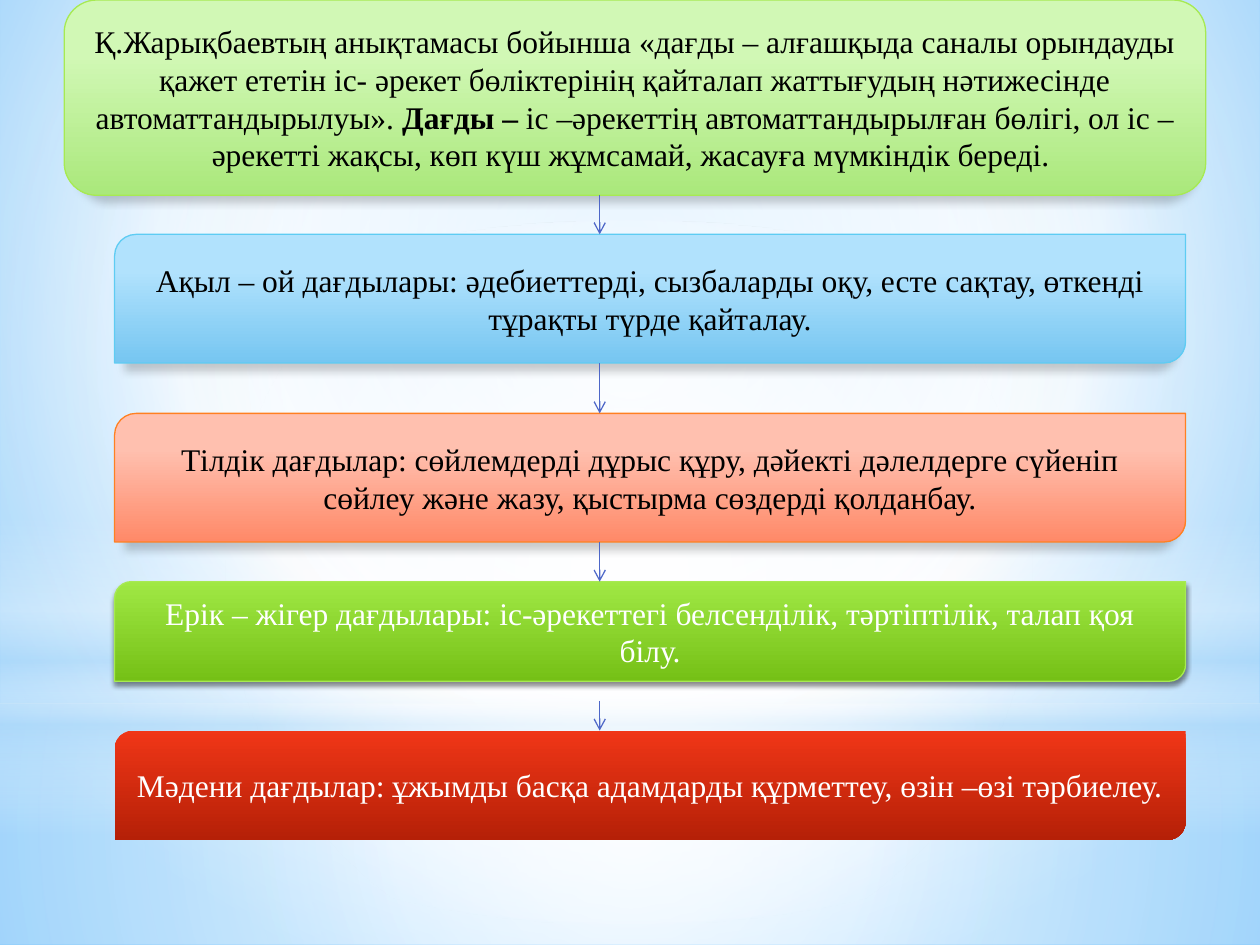
from lxml.etree import SubElement
from pptx import Presentation
from pptx.dml.color import RGBColor
from pptx.enum.shapes import MSO_CONNECTOR, MSO_SHAPE
from pptx.enum.text import MSO_ANCHOR, PP_ALIGN
from pptx.oxml.ns import qn
from pptx.util import Pt

WHITE = RGBColor(0xFF, 0xFF, 0xFF)
BLACK = RGBColor(0x00, 0x00, 0x00)
SKY = RGBColor(0xB4, 0xDC, 0xFA)
BACK_EDGE = RGBColor(0x9E, 0xD5, 0xFF)
BACK_END = RGBColor(0x5B, 0xB9, 0xFF)
ARROW = RGBColor(0x4E, 0x67, 0xC8)
GREEN_LINE = RGBColor(0xA7, 0xEA, 0x52)
BLUE_LINE = RGBColor(0x5E, 0xCC, 0xF3)
ORANGE_LINE = RGBColor(0xFF, 0x80, 0x21)
PALE_GREEN = ((28, RGBColor(0xD1, 0xF8, 0xB5)), (100, RGBColor(0xAA, 0xE8, 0x7B)))
PALE_BLUE = ((28, RGBColor(0xB1, 0xE2, 0xFD)), (100, RGBColor(0x76, 0xC6, 0xF1)))
PALE_RED = ((28, RGBColor(0xFF, 0xC0, 0xAF)), (100, RGBColor(0xFF, 0x89, 0x68)))
GREEN = ((0, RGBColor(0xA0, 0xE8, 0x44)), (100, RGBColor(0x75, 0xC0, 0x16)))
RED = ((0, RGBColor(0xF0, 0x36, 0x17)), (100, RGBColor(0xB5, 0x20, 0x07)))

# Opacity %, blur, distance, scale %
SOFT_SHADOW = (20, 5, 4, 98)
CLOSE_SHADOW = (45, 3.1, 1.8, 100)

CENTRE = (50, 50, 50, 50)
BAR_LEFT, BAR_WIDTH = 65.5, 612
ARROW_X = 342.7


def add_color(parent, color, opacity):
    element = SubElement(parent, qn("a:srgbClr"), val=str(color))
    if opacity < 100:
        SubElement(element, qn("a:alpha"), val=str(opacity * 1000))


def write_gradient(gradient, stops, focus=None):
    """Fill with (position %, colour[, opacity %]) stops: downwards, or circular around focus."""
    for child in list(gradient):
        gradient.remove(child)
    stop_list = SubElement(gradient, qn("a:gsLst"))
    for position, color, *opacity in stops:
        stop = SubElement(stop_list, qn("a:gs"), pos=str(position * 1000))
        add_color(stop, color, opacity[0] if opacity else 100)
    if focus:
        circle = SubElement(gradient, qn("a:path"), path="circle")
        sides = {side: str(value * 1000) for side, value in zip("ltrb", focus)}
        SubElement(circle, qn("a:fillToRect"), **sides)
    else:
        SubElement(gradient, qn("a:lin"), ang="5400000", scaled="0")


class SlideBuilder:
    font_name = "Times New Roman"
    font_size = Pt(18)
    line_width = Pt(0.75)

    def __init__(self, slide):
        self.slide = slide

    def background(self, stops, focus):
        self.slide.background.fill.gradient()
        write_gradient(next(self.slide.element.iter(qn("a:gradFill"))), stops, focus)

    def panel(self, kind, left, top, width, height, stops, focus=None):
        shape = self.slide.shapes.add_shape(kind, Pt(left), Pt(top), Pt(width), Pt(height))
        shape.shadow.inherit = False
        shape.line.fill.background()
        shape.fill.gradient()
        write_gradient(shape.element.spPr.find(qn("a:gradFill")), stops, focus)
        return shape

    def text_box(self, kind, left, top, width, height, stops, runs, color, line=None, shadow=None):
        """Add a gradient shape with centred text; runs are (text, bold) pairs."""
        shape = self.panel(kind, left, top, width, height, stops)
        if line is not None:
            shape.line.color.rgb = line
            shape.line.width = self.line_width
        if shadow:
            self.cast_shadow(shape, *shadow)
        frame = shape.text_frame
        frame.word_wrap = True
        frame.vertical_anchor = MSO_ANCHOR.MIDDLE
        paragraph = frame.paragraphs[0]
        paragraph.alignment = PP_ALIGN.CENTER
        for text, bold in runs:
            run = paragraph.add_run()
            run.text = text
            run.font.name = self.font_name
            run.font.size = self.font_size
            run.font.bold = bold
            run.font.color.rgb = color

    def cast_shadow(self, shape, opacity, blur, distance, scale):
        effects = shape.element.spPr.find(qn("a:effectLst"))
        shadow = SubElement(
            effects, qn("a:outerShdw"), blurRad=str(Pt(blur)), dist=str(Pt(distance)),
            dir="5400000", sx=str(scale * 1000), sy=str(scale * 1000),
            algn="ctr", rotWithShape="0")
        add_color(shadow, BLACK, opacity)

    def down_arrow(self, x, start, end):
        connector = self.slide.shapes.add_connector(
            MSO_CONNECTOR.STRAIGHT, Pt(x), Pt(start), Pt(x), Pt(end))
        connector.line.color.rgb = ARROW
        connector.line.width = self.line_width
        SubElement(connector.line._get_or_add_ln(), qn("a:tailEnd"), type="arrow")
        SubElement(connector.element.spPr, qn("a:effectLst"))


def main():
    presentation = Presentation()
    presentation.slide_width, presentation.slide_height = Pt(720), Pt(540)
    builder = SlideBuilder(presentation.slides.add_slide(presentation.slide_layouts[6]))

    builder.background(((0, BACK_EDGE), (60, WHITE), (100, BACK_END)), (20, 10, 20, 60))
    rectangle = MSO_SHAPE.RECTANGLE
    builder.panel(rectangle, 0, 401.8, 720, 138.2,
                  ((0, WHITE, 91), (37, WHITE, 76), (100, SKY, 79)), CENTRE)
    builder.panel(rectangle, 0, 0, 720, 401.8,
                  ((0, WHITE, 89), (48, WHITE, 62), (100, SKY, 79)), CENTRE)
    builder.panel(rectangle, 0, 296.6, 720, 180,
                  ((0, WHITE, 0), (29, WHITE, 30), (45, SKY, 40),
                   (55, WHITE, 26), (65, SKY, 60), (100, WHITE, 0)))
    builder.panel(MSO_SHAPE.OVAL, 0, 126, 720, 401.8,
                  ((0, WHITE), (56, WHITE, 0)), CENTRE)

    definition = (
        ("Қ.Жарықбаевтың анықтамасы бойынша «дағды – алғашқыда саналы орындауды қажет ететін "
         "іс- әрекет бөліктерінің қайталап жаттығудың нәтижесінде автоматтандырылуы». ", False),
        ("Дағды – ", True),
        ("іс –әрекеттің автоматтандырылған бөлігі, ол іс –әрекетті жақсы, көп күш жұмсамай, "
         "жасауға мүмкіндік береді. ", False),
    )
    builder.text_box(MSO_SHAPE.ROUNDED_RECTANGLE, 36.7, 0, 652.3, 111.6, PALE_GREEN,
                     definition, BLACK, GREEN_LINE, SOFT_SHADOW)

    # Arrow start, top, height, fill, text, text colour, outline, shadow
    skills = (
        (111.6, 133.9, 73.5, PALE_BLUE,
         "Ақыл – ой дағдылары: әдебиеттерді, сызбаларды оқу, есте сақтау, өткенді тұрақты "
         "түрде қайталау.", BLACK, BLUE_LINE, SOFT_SHADOW),
        (207.4, 236.2, 73.5, PALE_RED,
         "Тілдік дағдылар: сөйлемдерді дұрыс құру, дәйекті дәлелдерге сүйеніп сөйлеу және "
         "жазу, қыстырма сөздерді қолданбау.", BLACK, ORANGE_LINE, SOFT_SHADOW),
        (309.7, 332.4, 56.9, GREEN,
         "Ерік – жігер дағдылары: іс-әрекеттегі белсенділік, тәртіптілік, талап қоя білу.",
         WHITE, GREEN_LINE, CLOSE_SHADOW),
        (400.5, 417.5, 62.5, RED,
         "Мәдени дағдылар: ұжымды басқа адамдарды құрметтеу, өзін –өзі тәрбиелеу.",
         WHITE, None, None),
    )
    for start, top, height, stops, text, color, line, shadow in skills:
        builder.text_box(MSO_SHAPE.ROUND_2_DIAG_RECTANGLE, BAR_LEFT, top, BAR_WIDTH, height,
                         stops, ((text, False),), color, line, shadow)
        builder.down_arrow(ARROW_X, start, top)

    presentation.save("out.pptx")


if __name__ == "__main__":
    main()
